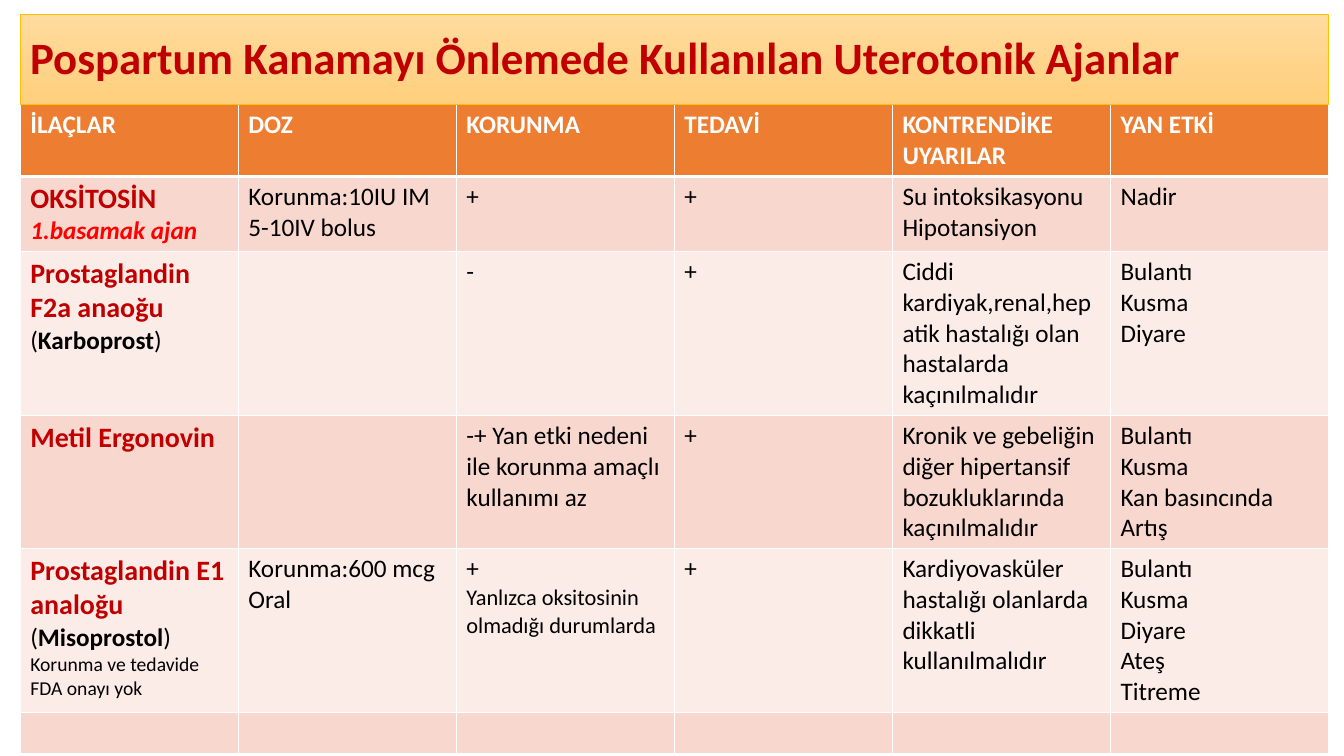
from lxml import etree
from pptx import Presentation
from pptx.dml.color import RGBColor
from pptx.enum.shapes import MSO_SHAPE as Shape
from pptx.enum.text import MSO_ANCHOR as Anchor, PP_ALIGN as Align
from pptx.oxml.ns import qn
from pptx.util import Cm, Pt

WHITE = RGBColor(0xFF, 0xFF, 0xFF)
BLACK = RGBColor(0x00, 0x00, 0x00)
DARK_RED = RGBColor(0xC0, 0x00, 0x00)
RED = RGBColor(0xFF, 0x00, 0x00)
ORANGE = RGBColor(0xED, 0x7D, 0x31)
BAND_DARK = RGBColor(0xF8, 0xD7, 0xCE)
BAND_LIGHT = RGBColor(0xFC, 0xEC, 0xE8)
GOLD = RGBColor(0xFF, 0xC0, 0x00)
TITLE_TOP = RGBColor(0xFF, 0xDB, 0x9E)
TITLE_BOTTOM = RGBColor(0xFF, 0xD0, 0x7C)

# Size, colour, bold, italic
STYLES = {
    "title": (32, DARK_RED, True, False),
    "header": (18, WHITE, True, False),
    "drug": (20, DARK_RED, True, False),
    "rank": (18, RED, True, True),
    "body": (18, BLACK, False, False),
    "strong": (18, BLACK, True, False),
    "remark": (16, BLACK, False, False),
    "note": (14, BLACK, False, False),
}

# A cell is plain text, one paragraph a line, or a list of paragraphs made of (text, style) runs
ROWS = [
    ["İLAÇLAR", "DOZ", "KORUNMA", "TEDAVİ", "KONTRENDİKE\nUYARILAR", "YAN ETKİ"],
    [[[("OKSİTOSİN ", "drug"), ("1.basamak ajan", "rank")]],
     "Korunma:10IU IM\n5-10IV bolus", "+", "+",
     "Su intoksikasyonu\nHipotansiyon", "Nadir"],
    [[[("Prostaglandin F2a anaoğu", "drug")],
      [("(", "body"), ("Karboprost", "strong"), (")", "body")]],
     "", "-", "+",
     "Ciddi kardiyak,renal,hepatik hastalığı olan hastalarda kaçınılmalıdır",
     "Bulantı\nKusma\nDiyare"],
    [[[("Metil Ergonovin", "drug")]],
     "", "-+ Yan etki nedeni ile korunma amaçlı kullanımı az", "+",
     "Kronik ve gebeliğin diğer hipertansif bozukluklarında kaçınılmalıdır",
     "Bulantı\nKusma\nKan basıncında Artış"],
    [[[("Prostaglandin E1 analoğu", "drug")],
      [("(", "body"), ("Misoprostol", "strong"), (")", "body")],
      [("Korunma ve tedavide FDA onayı yok", "note")]],
     "Korunma:600 mcg Oral",
     [[("+", "body")], [("Yanlızca oksitosinin olmadığı durumlarda", "remark")]],
     "+", "Kardiyovasküler hastalığı olanlarda dikkatli kullanılmalıdır",
     "Bulantı\nKusma\nDiyare\nAteş\nTitreme"],
    [""] * 6,
]

LEFT, TITLE_Y, WIDTH, TITLE_HEIGHT = Cm(0.51), Cm(0.36), Cm(32.97), Cm(2.28)
ROW_HEIGHT = Cm(1.04)


def write_paragraphs(text_frame, paragraphs):
    for index, runs in enumerate(paragraphs):
        paragraph = text_frame.paragraphs[0] if index == 0 else text_frame.add_paragraph()
        paragraph.alignment = Align.LEFT
        for text, style in runs:
            run = paragraph.add_run()
            run.text = text
            font = run.font
            font.name = "Calibri"
            size, font.color.rgb, font.bold, font.italic = STYLES[style]
            font.size = Pt(size)


def add_border(cell, side, points):
    properties = cell._tc.get_or_add_tcPr()
    line = etree.SubElement(properties, qn(f"a:ln{side}"), w=str(Pt(points)))
    fill = etree.SubElement(line, qn("a:solidFill"))
    etree.SubElement(fill, qn("a:srgbClr"), val=str(WHITE))


presentation = Presentation()
presentation.slide_width, presentation.slide_height = Cm(33.87), Cm(19.05)
slide = presentation.slides.add_slide(presentation.slide_layouts[6])

# Table of drugs
table = slide.shapes.add_table(len(ROWS), len(ROWS[0]), LEFT, TITLE_Y + TITLE_HEIGHT,
                               WIDTH, ROW_HEIGHT * len(ROWS)).table
for row_index, row in enumerate(ROWS):
    is_header = row_index == 0
    band = ORANGE if is_header else BAND_DARK if row_index % 2 else BAND_LIGHT
    for column_index, content in enumerate(row):
        cell = table.cell(row_index, column_index)
        for side in "LRTB":
            under_header = (row_index, side) in ((0, "B"), (1, "T"))
            add_border(cell, side, 3 if under_header else 1)
        cell.fill.solid()
        cell.fill.fore_color.rgb = band
        if isinstance(content, str):
            style = "header" if is_header else "body"
            content = [[(line, style)] for line in content.splitlines()]
        write_paragraphs(cell.text_frame, content)

# Title bar
title = slide.shapes.add_shape(Shape.RECTANGLE, LEFT, TITLE_Y, WIDTH, TITLE_HEIGHT)
title.shadow.inherit = False
title.fill.gradient()
title.fill.gradient_angle = 270
for stop, color in zip(title.fill.gradient_stops, (TITLE_TOP, TITLE_BOTTOM)):
    stop.color.rgb = color
title.line.color.rgb = GOLD
title.line.width = Pt(0.5)
title.text_frame.word_wrap = True
title.text_frame.vertical_anchor = Anchor.MIDDLE
write_paragraphs(title.text_frame, [
    [("Pospartum Kanamayı Önlemede Kullanılan Uterotonik Ajanlar", "title")]])
title.text_frame.paragraphs[0].line_spacing = 0.9

presentation.save("out.pptx")
